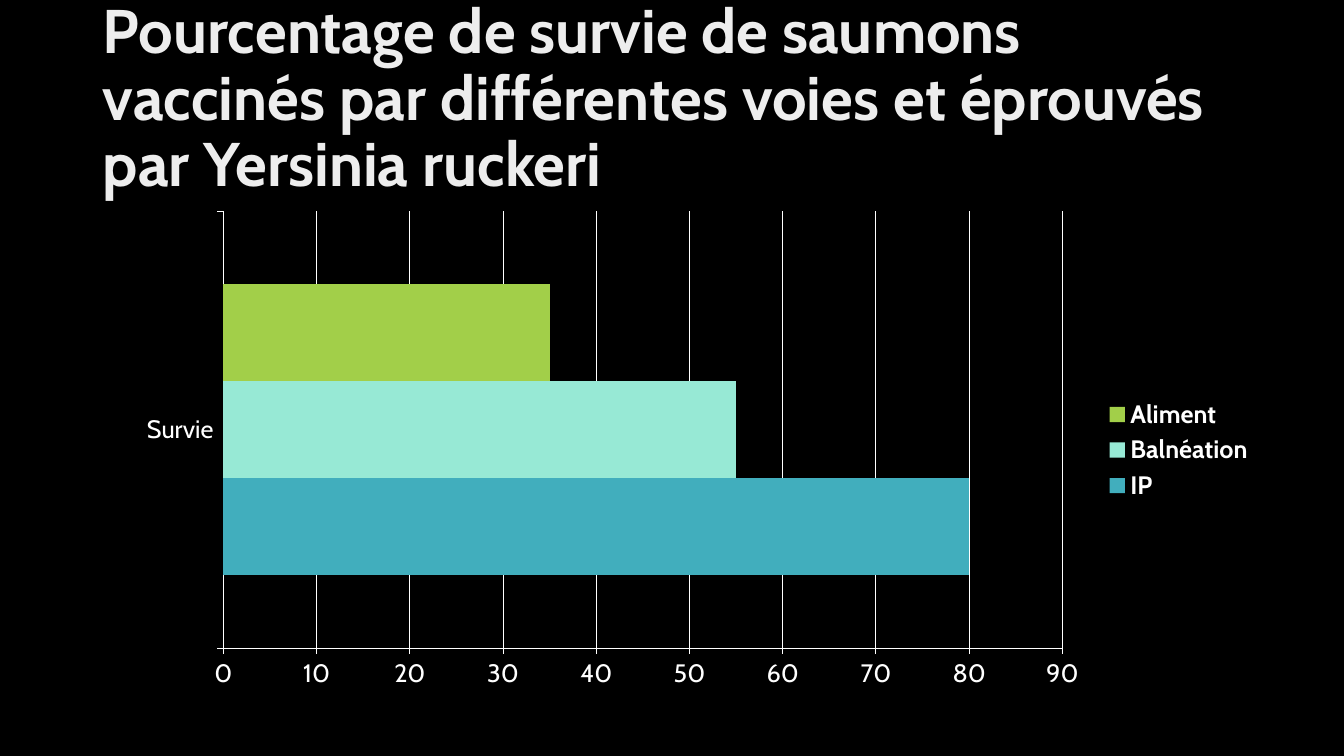
"""Build a slide with a bar chart of salmon survival by vaccination route."""
from pptx import Presentation
from pptx.chart.data import CategoryChartData
from pptx.dml.color import RGBColor
from pptx.enum.chart import XL_CHART_TYPE, XL_LEGEND_POSITION, XL_TICK_MARK
from pptx.enum.text import MSO_ANCHOR, MSO_AUTO_SIZE, PP_ALIGN
from pptx.util import Inches, Pt

BAR_CLUSTERED = XL_CHART_TYPE.BAR_CLUSTERED
LEGEND_RIGHT = XL_LEGEND_POSITION.RIGHT
TICK_OUTSIDE = XL_TICK_MARK.OUTSIDE
TICK_NONE = XL_TICK_MARK.NONE
MIDDLE = MSO_ANCHOR.MIDDLE
NO_AUTOFIT = MSO_AUTO_SIZE.NONE
LEFT = PP_ALIGN.LEFT

TITLE = ("Pourcentage de survie de saumons vaccinés par différentes voies "
         "et éprouvés par Yersinia ruckeri")
CATEGORIES = ["Survie"]
SURVIVAL = {"IP": [80], "Balnéation": [55], "Aliment": [35]}
FONT = "Cabin"
COLORS = {
    "background": "000000",
    "title": "EDEDED",
    "chart": "FFFFFF",
    "IP": "41AEBD",
    "Balnéation": "97E9D5",
    "Aliment": "A2CF49",
}
TITLE_BOX = (0.92, 0.27, 11.5, 1.45)
CHART_BOX = (1.23, 2, 11.31, 4.93)


def color(key):
    return RGBColor.from_string(COLORS[key])


def style_font(font, size, key, bold):
    font.name = FONT
    font.size = Pt(size)
    font.bold = bold
    font.color.rgb = color(key)


def style_line(line):
    line.color.rgb = color("chart")
    line.width = Pt(0.75)


def add_title(slide):
    title = slide.shapes.title
    title.left, title.top, title.width, title.height = map(Inches, TITLE_BOX)
    frame = title.text_frame
    frame.text = TITLE
    frame.word_wrap = True
    frame.auto_size = NO_AUTOFIT
    frame.vertical_anchor = MIDDLE
    paragraph = frame.paragraphs[0]
    paragraph.alignment = LEFT
    paragraph.line_spacing = 0.9
    style_font(paragraph.runs[0].font, 44, "title", True)


def add_survival_chart(slide):
    survival_data = CategoryChartData()
    survival_data.categories = CATEGORIES
    for route, values in SURVIVAL.items():
        survival_data.add_series(route, values)
    chart = slide.shapes.add_chart(
        BAR_CLUSTERED, *map(Inches, CHART_BOX), survival_data).chart
    chart.has_title = False
    style_font(chart.font, 18, "chart", False)

    plot = chart.plots[0]
    plot.gap_width = 150
    plot.vary_by_categories = False
    for series in plot.series:
        series.format.fill.solid()
        series.format.fill.fore_color.rgb = color(series.name)

    for axis in (chart.category_axis, chart.value_axis):
        axis.major_tick_mark = TICK_OUTSIDE
        axis.minor_tick_mark = TICK_NONE
        style_line(axis.format.line)
    chart.category_axis.has_major_gridlines = False
    chart.value_axis.has_major_gridlines = True
    style_line(chart.value_axis.major_gridlines.format.line)
    chart.value_axis.minimum_scale = 0
    chart.value_axis.maximum_scale = 90
    chart.value_axis.major_unit = 10

    chart.has_legend = True
    chart.legend.position = LEGEND_RIGHT
    chart.legend.include_in_layout = False
    style_font(chart.legend.font, 18, "chart", True)


def main():
    deck = Presentation()
    deck.slide_width, deck.slide_height = Inches(13.33), Inches(7.5)
    slide = deck.slides.add_slide(deck.slide_layouts.get_by_name("Title Only"))
    slide.background.fill.solid()
    slide.background.fill.fore_color.rgb = color("background")
    add_title(slide)
    add_survival_chart(slide)
    deck.save("out.pptx")


if __name__ == "__main__":
    main()
